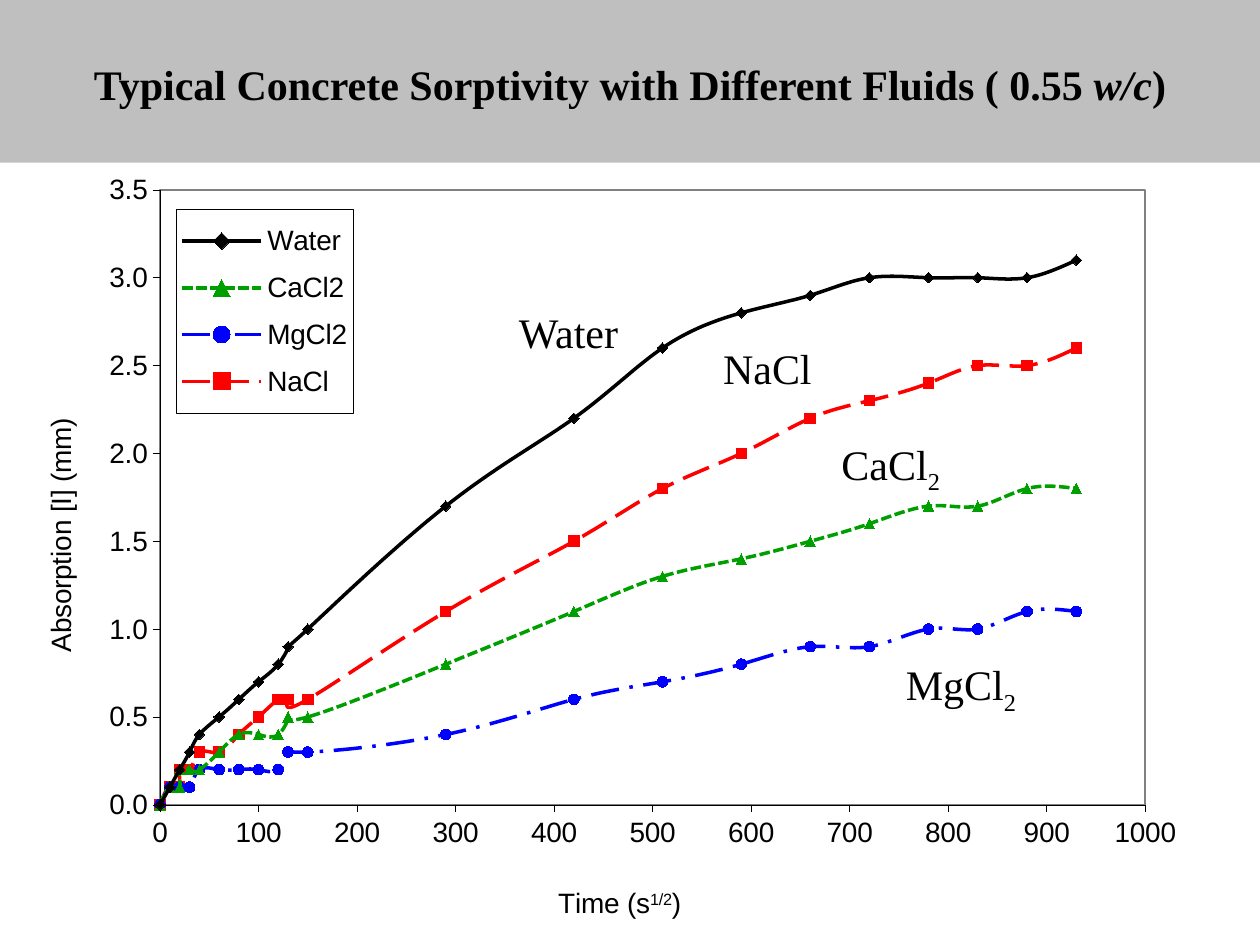
from lxml import etree
from pptx import Presentation
from pptx.chart.data import XyChartData
from pptx.dml.color import RGBColor as Rgb
from pptx.enum.chart import XL_CHART_TYPE as Kind, XL_LEGEND_POSITION as Side
from pptx.enum.chart import XL_MARKER_STYLE as Mark, XL_TICK_MARK as Tick
from pptx.enum.dml import MSO_LINE as Dash
from pptx.enum.shapes import MSO_SHAPE as Form
from pptx.enum.text import MSO_ANCHOR as Anchor, MSO_AUTO_SIZE as Fit, PP_ALIGN as Align
from pptx.oxml import parse_xml
from pptx.oxml.ns import nsdecls, qn
from pptx.util import Inches, Pt

HUES = {"ink": "000000", "paper": "FFFFFF", "band": "BFBFBF", "frame": "808080",
        "green": "009F00", "blue": "0000FF", "red": "FF0000"}
SERIF, SANS = "Times New Roman", "Arial"

TIMES = [0, 10, 20, 20, 30, 40, 60, 80, 100, 120, 130, 150,
         290, 420, 510, 590, 660, 720, 780, 830, 880, 930]
# Name, hue, dash, marker, absorption at each time
FLUIDS = [
    ("Water", "ink", Dash.SOLID, Mark.DIAMOND,
     [0, 0.1, 0.2, 0.2, 0.3, 0.4, 0.5, 0.6, 0.7, 0.8, 0.9, 1,
      1.7, 2.2, 2.6, 2.8, 2.9, 3, 3, 3, 3, 3.1]),
    ("CaCl2", "green", Dash.SQUARE_DOT, Mark.TRIANGLE,
     [0, 0.1, 0.1, 0.2, 0.2, 0.2, 0.3, 0.4, 0.4, 0.4, 0.5, 0.5,
      0.8, 1.1, 1.3, 1.4, 1.5, 1.6, 1.7, 1.7, 1.8, 1.8]),
    ("MgCl2", "blue", Dash.LONG_DASH_DOT, Mark.CIRCLE,
     [0, 0.1, 0.1, 0.1, 0.1, 0.2, 0.2, 0.2, 0.2, 0.2, 0.3, 0.3,
      0.4, 0.6, 0.7, 0.8, 0.9, 0.9, 1, 1, 1.1, 1.1]),
    ("NaCl", "red", Dash.LONG_DASH, Mark.SQUARE,
     [0, 0.1, 0.1, 0.2, 0.2, 0.3, 0.3, 0.4, 0.5, 0.6, 0.6, 0.6,
      1.1, 1.5, 1.8, 2, 2.2, 2.3, 2.4, 2.5, 2.5, 2.6]),
]
# Text, subscript, box
TAGS = [("Water", "", (4.02, 2.38, 1.26, 0.5)),
        ("NaCl", "", (5.64, 2.67, 1.15, 0.5)),
        ("CaCl", "2", (6.58, 3.43, 1.18, 0.5)),
        ("MgCl", "2", (7.09, 5.18, 1.18, 0.5))]


def hue(name):
    return Rgb.from_string(HUES[name])


def inch(box):
    return [Inches(n) for n in box]


def add_run(para, text, size, face, bold=False, slant=False, base=0):
    run = para.add_run()
    run.text = text
    font = run.font
    font.size, font.name, font.bold, font.italic = Pt(size), face, bold, slant
    font.color.rgb = hue("ink")
    if base:
        run._r.get_or_add_rPr().set("baseline", str(base * 1000))


def lay_out(x, y, w=None, h=None, inner=False):
    """Manual chart layout, in shares of the chart's size."""
    root = parse_xml(f"<c:layout {nsdecls('c')}><c:manualLayout/></c:layout>")
    parts = [("layoutTarget", "inner")] if inner else []
    parts += [("xMode", "edge"), ("yMode", "edge"), ("x", x), ("y", y)]
    parts += [(k, v) for k, v in (("w", w), ("h", h)) if v]
    for key, val in parts:
        etree.SubElement(root[0], qn("c:" + key)).set("val", str(val))
    return root


def move(part, layout):
    """Place a legend or axis title."""
    for old in part.findall(qn("c:layout")):
        part.remove(old)
    part.find(qn("c:overlay")).addprevious(layout)


def frame(color, width):
    return parse_xml(
        f"<c:spPr {nsdecls('c', 'a')}><a:solidFill><a:srgbClr val='{HUES['paper']}'/>"
        f"</a:solidFill><a:ln w='{Pt(width)}'><a:solidFill>"
        f"<a:srgbClr val='{HUES[color]}'/></a:solidFill></a:ln></c:spPr>")


def set_axis(axis, top, step, form, name, spot):
    axis.minimum_scale, axis.maximum_scale, axis.major_unit = 0, top, step
    axis.has_major_gridlines = False
    axis.major_tick_mark, axis.minor_tick_mark = Tick.OUTSIDE, Tick.NONE
    labels = axis.tick_labels
    labels.number_format, labels.number_format_is_linked = form, False
    axis.format.line.color.rgb = hue("ink")
    axis.format.line.width = Pt(0.25)
    para = axis.axis_title.text_frame.paragraphs[0]
    for text, base in name:
        add_run(para, text, 16, SANS, base=base)
    move(axis.axis_title.element, lay_out(*spot))


def add_plot(slide, box):
    data = XyChartData()
    for name, *_, vals in FLUIDS:
        line = data.add_series(name)
        for x, y in zip(TIMES, vals):
            line.add_data_point(x, y)
    chart = slide.shapes.add_chart(Kind.XY_SCATTER_SMOOTH, *inch(box), data).chart
    chart.has_title = False
    chart.font.size, chart.font.name = Pt(16), SANS
    chart.font.color.rgb = hue("ink")
    plot = chart.plots[0]
    plot.vary_by_categories = False

    # Curves
    for line, (_, color, dash, mark, _) in zip(plot.series, FLUIDS):
        pen = line.format.line
        pen.color.rgb, pen.width, pen.dash_style = hue(color), Pt(2), dash
        line.marker.style, line.marker.size = mark, 6
        look = line.marker.format
        look.fill.solid()
        look.fill.fore_color.rgb = look.line.color.rgb = hue(color)
    root = chart.element
    for flag in root.xpath(".//c:smooth"):
        flag.set("val", "1")

    # Axes
    set_axis(chart.category_axis, 1000, 100, "0",
             [("Time (s", 0), ("1/2", 30), (")", 0)], (0.44, 0.92))
    set_axis(chart.value_axis, 3.5, 0.5, "0.0",
             [("Absorption [I] (mm)", 0)], (0.03, 0.32))

    # Legend
    chart.has_legend = True
    chart.legend.position = Side.RIGHT
    chart.legend.include_in_layout = False
    key = root.xpath(".//c:legend")[0]
    move(key, lay_out(0.14, 0.06, 0.14, 0.26))
    key.find(qn("c:overlay")).addnext(frame("ink", 0.25))

    # Plot area and white ground
    area = root.xpath(".//c:plotArea")[0]
    for old in area.findall(qn("c:layout")):
        area.remove(old)
    area.insert(0, lay_out(0.127, 0.035, 0.782, 0.786, inner=True))
    area.append(frame("frame", 1))
    ground = frame("paper", 0)
    edge = ground.find(qn("a:ln"))
    edge.clear()
    etree.SubElement(edge, qn("a:noFill"))
    root.find(qn("c:chart")).addnext(ground)


def add_ground(slide, box):
    ground = slide.shapes.add_shape(Form.RECTANGLE, *inch(box))
    ground.shadow.inherit = False
    ground.fill.solid()
    ground.fill.fore_color.rgb = hue("band")
    ground.line.fill.background()


def set_title(slide, box):
    title = slide.shapes.title
    title.left, title.top, title.width, title.height = inch(box)
    title.element.getparent().append(title.element)  # bring to front
    text = title.text_frame
    text.word_wrap, text.vertical_anchor = True, Anchor.MIDDLE
    para = text.paragraphs[0]
    para.alignment = Align.CENTER
    for part, slant in [("Typical Concrete Sorptivity with Different Fluids ( 0.55 ", False),
                        ("w/c", True), (")", False)]:
        add_run(para, part, 24, SERIF, bold=True, slant=slant)


def add_tag(slide, name, sub, box):
    text = slide.shapes.add_textbox(*inch(box)).text_frame
    text.word_wrap, text.auto_size = True, Fit.SHAPE_TO_FIT_TEXT
    para = text.paragraphs[0]
    add_run(para, name, 24, SERIF)
    if sub:
        add_run(para, sub, 24, SERIF, base=-25)


def main():
    deck = Presentation()
    deck.slide_width, deck.slide_height = Inches(10), Inches(7.5)
    slide = deck.slides.add_slide(deck.slide_layouts[5])
    add_ground(slide, (0, 0, 10, 7.5))
    add_plot(slide, (0, 1.29, 10, 6.21))
    set_title(slide, (0.21, 0.25, 9.58, 0.83))
    for tag in TAGS:
        add_tag(slide, *tag)
    deck.save("out.pptx")


if __name__ == "__main__":
    main()
